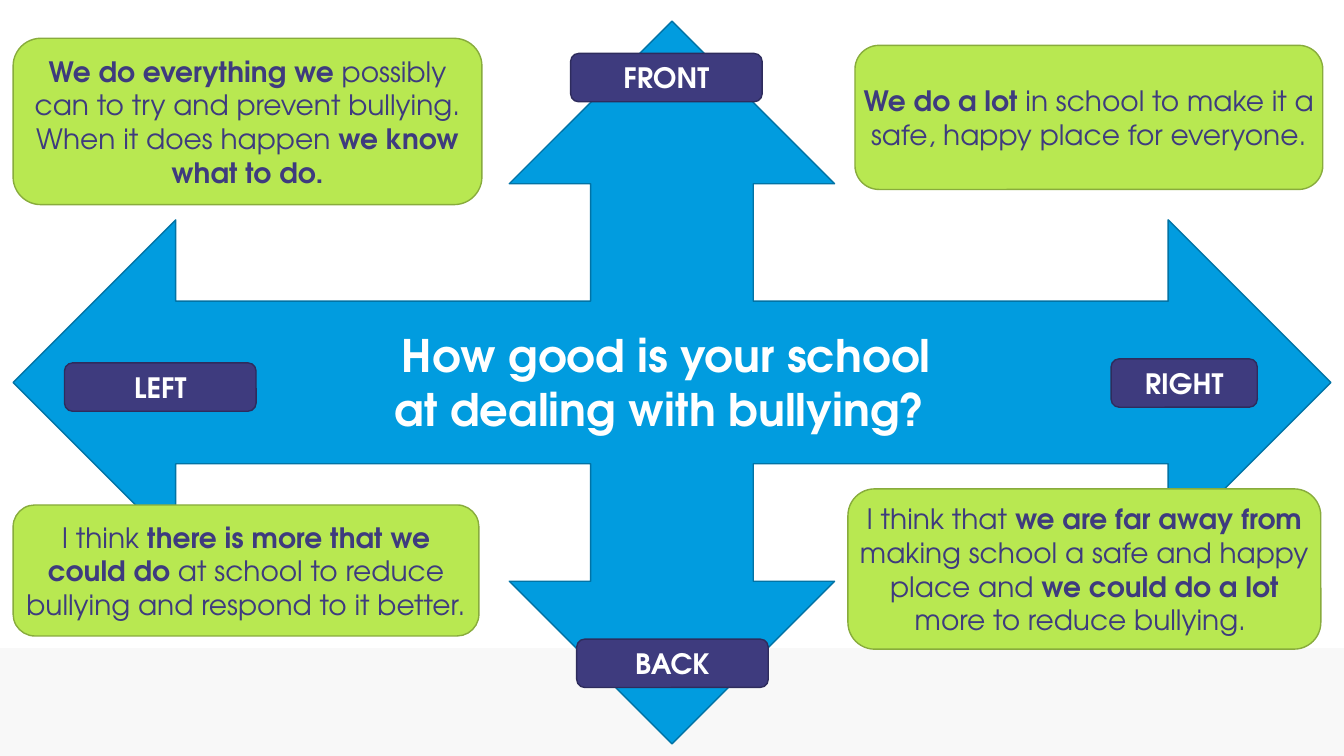
from dataclasses import dataclass

from pptx import Presentation
from pptx.dml.color import RGBColor
from pptx.enum.shapes import MSO_SHAPE
from pptx.enum.text import MSO_ANCHOR, MSO_AUTO_SIZE, PP_ALIGN
from pptx.shapes.autoshape import Shape
from pptx.slide import Slide
from pptx.text.text import TextFrame
from pptx.util import Inches, Pt


@dataclass(frozen=True)
class Theme:
    font: str = "TeX Gyre Adventor"
    head: int = 32
    body: int = 20
    white: str = "FFFFFF"
    band: str = "F8F8F8"
    blue: str = "019CDF"
    blue_edge: str = "0173A5"
    green: str = "B8E851"
    green_edge: str = "88AC3C"
    navy: str = "3E3B7E"
    navy_edge: str = "2E2C5D"


@dataclass(frozen=True)
class Box:
    left: float
    top: float
    width: float
    height: float


@dataclass(frozen=True)
class Style:
    fill: str
    edge: str
    ink: str


@dataclass(frozen=True)
class Card:
    box: Box
    text: str  # parts between asterisks are bold
    style: Style


THEME = Theme()
ANSWER = Style(THEME.green, THEME.green_edge, THEME.navy)
LABEL = Style(THEME.navy, THEME.navy_edge, THEME.white)

CARDS = [
    Card(Box(0.13, 5.01, 4.62, 1.3),
         "I think *there is more that we could do *at school to reduce "
         "bullying and respond to it better.", ANSWER),
    Card(Box(8.41, 4.85, 4.69, 1.59),
         "I think that *we are far away from* making school a safe and happy "
         "place and *we could do a lot* more to reduce bullying. ", ANSWER),
    Card(Box(8.48, 0.45, 4.64, 1.43),
         "*We do a lot *in school to make it a safe, happy place for "
         "everyone.", ANSWER),
    Card(Box(5.72, 6.34, 1.9, 0.48), "*BACK*", LABEL),
    Card(Box(5.66, 0.53, 1.9, 0.48), "*FRONT*", LABEL),
    Card(Box(11.02, 3.56, 1.45, 0.48), "*RIGHT*", LABEL),
    Card(Box(0.64, 3.6, 1.9, 0.48), "*LEFT*", LABEL),
    Card(Box(0.13, 0.38, 4.65, 1.65),
         "*We do everything we *possibly can to try and prevent bullying. "
         "When it does happen *we know what to do.*", ANSWER),
]


def add_shape(slide: Slide, kind: MSO_SHAPE, box: Box, fill: str,
              edge: str = "") -> Shape:
    shape = slide.shapes.add_shape(
        kind, Inches(box.left), Inches(box.top),
        Inches(box.width), Inches(box.height))
    shape.shadow.inherit = False
    shape.fill.solid()
    shape.fill.fore_color.rgb = RGBColor.from_string(fill)
    if edge:
        shape.line.color.rgb = RGBColor.from_string(edge)
        shape.line.width = Pt(1)
    else:
        shape.line.fill.background()
    return shape


def write(frame: TextFrame, text: str, size: int, ink: str) -> None:
    frame.word_wrap = True
    para = frame.paragraphs[0]
    para.alignment = PP_ALIGN.CENTER
    for index, part in enumerate(text.split("*")):
        if not part:
            continue
        run = para.add_run()
        run.text = part
        run.font.name = THEME.font
        run.font.size = Pt(size)
        run.font.bold = index % 2 == 1
        run.font.color.rgb = RGBColor.from_string(ink)


def add_card(slide: Slide, card: Card) -> None:
    style = card.style
    shape = add_shape(slide, MSO_SHAPE.ROUNDED_RECTANGLE, card.box,
                      style.fill, style.edge)
    frame = shape.text_frame
    frame.margin_left = frame.margin_right = 0
    frame.vertical_anchor = MSO_ANCHOR.MIDDLE
    write(frame, card.text, THEME.body, style.ink)


def add_title(slide: Slide, box: Box, text: str) -> None:
    title = slide.shapes.title
    title.left, title.top = Inches(box.left), Inches(box.top)
    title.width, title.height = Inches(box.width), Inches(box.height)
    frame = title.text_frame
    frame.auto_size = MSO_AUTO_SIZE.SHAPE_TO_FIT_TEXT
    frame.vertical_anchor = MSO_ANCHOR.TOP
    write(frame, text, THEME.head, THEME.white)
    # Bring the title in front of the arrow
    title.element.getparent().append(title.element)


def main() -> None:
    deck = Presentation()
    deck.slide_width, deck.slide_height = Inches(13.33), Inches(7.5)
    slide = deck.slides.add_slide(deck.slide_layouts[5])

    # Footer band and four-way arrow
    add_shape(slide, MSO_SHAPE.RECTANGLE, Box(0, 6.43, 13.33, 1.07),
              THEME.band)
    add_shape(slide, MSO_SHAPE.QUAD_ARROW, Box(0.13, 0.21, 13.07, 7.17),
              THEME.blue, THEME.blue_edge)

    # Answers and direction labels
    for card in CARDS:
        add_card(slide, card)

    # Question in the centre
    add_title(slide, Box(3.62, 3.2, 5.98, 1.18),
              "*How good is your school at dealing with bullying? *")
    deck.save("out.pptx")


if __name__ == "__main__":
    main()
